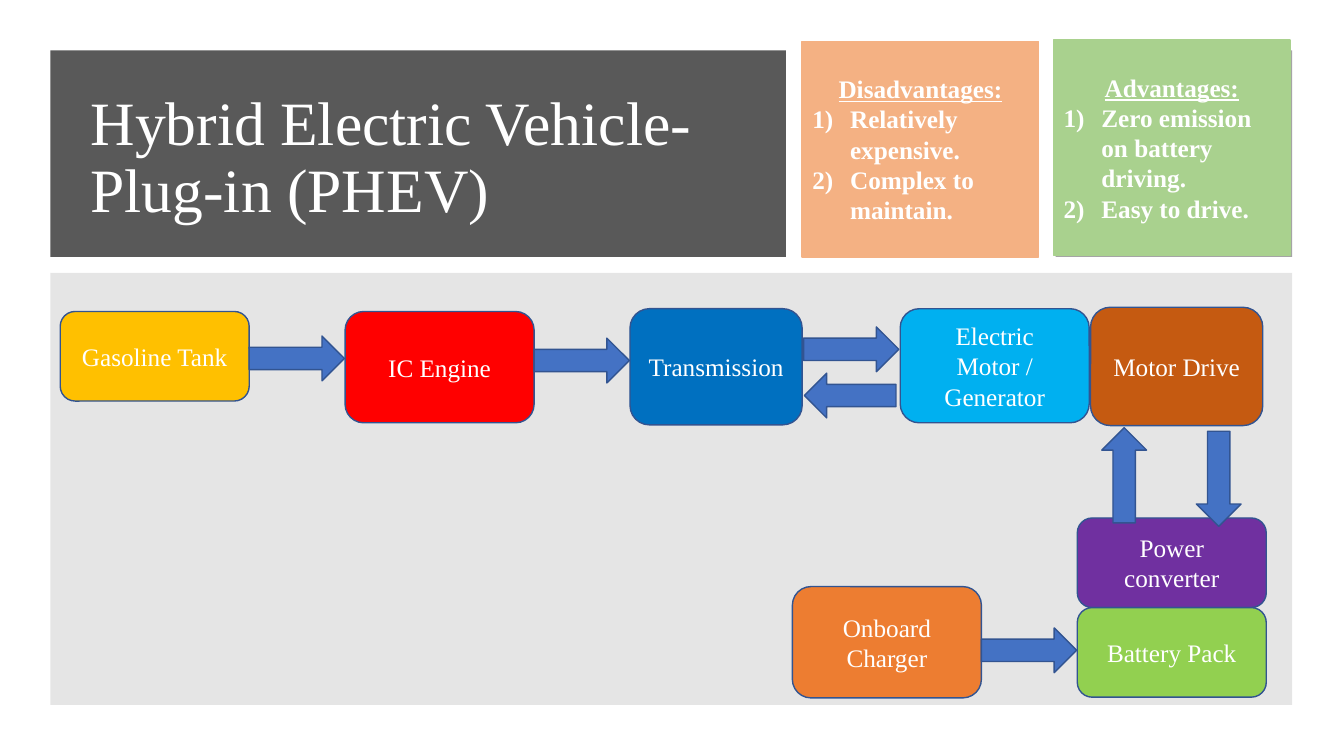
from lxml.etree import SubElement
from pptx import Presentation
from pptx.dml.color import RGBColor
from pptx.enum.shapes import MSO_SHAPE
from pptx.enum.text import MSO_ANCHOR, MSO_AUTO_SIZE, PP_ALIGN
from pptx.oxml.ns import qn
from pptx.util import Pt

WHITE = RGBColor(0xFF, 0xFF, 0xFF)
DARK = RGBColor(0x59, 0x59, 0x59)
GREY = RGBColor(0xA5, 0xA5, 0xA5)
MID_GREY = RGBColor(0x80, 0x80, 0x80)
BLUE = RGBColor(0x44, 0x72, 0xC4)
OUTLINE = RGBColor(0x32, 0x54, 0x91)
PEACH = RGBColor(0xF4, 0xB1, 0x83)
MINT = RGBColor(0xA9, 0xD1, 0x8E)
GOLD = RGBColor(0xFF, 0xC0, 0x00)
RED = RGBColor(0xFF, 0x00, 0x00)
DEEP_BLUE = RGBColor(0x00, 0x70, 0xC0)
SKY = RGBColor(0x00, 0xB0, 0xF0)
BROWN = RGBColor(0xC5, 0x5A, 0x11)
PURPLE = RGBColor(0x70, 0x30, 0xA0)
GREEN = RGBColor(0x92, 0xD0, 0x50)
ORANGE = RGBColor(0xED, 0x7D, 0x31)

FONT = {"name": "Times New Roman", "size": Pt(18), "bold": False, "underline": False}
FRAME = {"word_wrap": True, "auto_size": MSO_AUTO_SIZE.NONE,
         "vertical_anchor": MSO_ANCHOR.MIDDLE}
TIGHT = {"line_spacing": 1.0, "space_before": Pt(0), "space_after": Pt(0)}
BOX_W, LOW, TALL = 135, 64, 79.5
DRIVE_W = 123
ARROW_W, ARROW_H = 68, 32

# label, colour, left, top, width, height
COMPONENTS = [
    ("Gasoline Tank", GOLD, 43, 222.5, BOX_W, LOW),
    ("IC Engine", RED, 246.5, 222.5, BOX_W, TALL),
    ("Electric Motor / Generator", SKY, 643, 220.5, BOX_W, 81.5),
    ("Power converter", PURPLE, 769.5, 370, BOX_W, LOW),
    ("Battery Pack", GREEN, 769.5, 434, BOX_W, LOW),
    ("Motor Drive", BROWN, 779, 219.5, DRIVE_W, 84.5),
    ("Transmission", DEEP_BLUE, 450, 220.5, DRIVE_W, 83),
    ("Onboard Charger", ORANGE, 566, 419, BOX_W, TALL),
]

# left, top, width, rotation, preset
RIGHT, LEFT = MSO_SHAPE.RIGHT_ARROW, MSO_SHAPE.LEFT_ARROW
ARROWS = [
    (178, 240, ARROW_W, 0, RIGHT),
    (381.5, 241.5, ARROW_W, 0, RIGHT),
    (574, 233.5, ARROW_W, 0, RIGHT),
    (574.5, 266.5, 65.5, 0, LEFT),
    (769, 323.5, ARROW_W, 270, RIGHT),
    (836.5, 326, ARROW_W, 90, RIGHT),
    (701, 448.5, ARROW_W, 0, RIGHT),
]


def apply(target, values):
    for name, value in values.items():
        setattr(target, name, value)


def place(shape, left, top, width, height):
    apply(shape, {"left": Pt(left), "top": Pt(top),
                  "width": Pt(width), "height": Pt(height)})


def paint(shape, fill, line=None):
    shape.fill.solid()
    shape.fill.fore_color.rgb = fill
    if line is None:
        shape.line.fill.background()
    else:
        shape.line.color.rgb = line
        shape.line.width = Pt(1)


def write(para, text, align=PP_ALIGN.LEFT, **font):
    apply(para, {**TIGHT, "alignment": align})
    span = para.add_run()
    span.text = text
    apply(span.font, {**FONT, **font})
    span.font.color.rgb = WHITE


def add_block(page, preset, at, fill, line=None):
    block = page.shapes.add_shape(preset, *(Pt(length) for length in at))
    block.shadow.inherit = False
    paint(block, fill, line)
    return block


def add_component(page, label, fill, *at):
    box = add_block(page, MSO_SHAPE.ROUNDED_RECTANGLE, at, fill, OUTLINE)
    apply(box.text_frame, FRAME)
    write(box.text_frame.paragraphs[0], label, PP_ALIGN.CENTER)


def bring_to_front(page, shape):
    page.shapes.element.append(shape.element)


def set_bullet(para, indent, numbered):
    props = para._p.get_or_add_pPr()
    props.set("marL", str(Pt(indent)))
    props.set("indent", str(-Pt(indent)))
    if numbered:
        SubElement(props, qn("a:buFont"), typeface="+mj-lt")
        SubElement(props, qn("a:buAutoNum"), type="arabicParenR")
    else:
        SubElement(props, qn("a:buNone"))


def fill_title(page, text):
    title = page.shapes.title
    place(title, 57.5, 57.5, 479.5, 112.5)
    apply(title.text_frame, FRAME)
    para = title.text_frame.paragraphs[0]
    write(para, text, size=Pt(44))
    para.line_spacing = 0.9
    bring_to_front(page, title)


def fill_list(page, holder, at, colour, heading, items):
    place(holder, *at)
    paint(holder, colour, colour)
    frame = holder.text_frame
    apply(frame, FRAME)
    head = frame.paragraphs[0]
    write(head, heading, PP_ALIGN.CENTER, bold=True, underline=True)
    set_bullet(head, 0, False)
    for item in items:
        para = frame.add_paragraph()
        write(para, item, bold=True)
        set_bullet(para, 27, True)
    bring_to_front(page, holder)


def main():
    deck = Presentation()
    deck.slide_width, deck.slide_height = Pt(960), Pt(540)
    page = deck.slides.add_slide(deck.slide_layouts[3])

    # Background panels
    add_block(page, MSO_SHAPE.RECTANGLE, (36, 36, 525.5, 147.5), DARK)
    add_block(page, MSO_SHAPE.RECTANGLE, (754, 36, 169, 147.5), GREY)
    diagram = add_block(page, MSO_SHAPE.RECTANGLE, (36, 195, 887, 308.5), MID_GREY)
    colour = diagram.element.spPr.find(".//" + qn("a:srgbClr"))
    SubElement(colour, qn("a:alpha"), val="20000")

    # Title
    fill_title(page, "Hybrid Electric Vehicle- Plug-in (PHEV)")

    # Drivetrain diagram
    for component in COMPONENTS:
        add_component(page, *component)
    for left, top, width, rotation, preset in ARROWS:
        arrow = add_block(page, preset, (left, top, width, ARROW_H), BLUE, OUTLINE)
        arrow.rotation = rotation

    # Pros and cons
    fill_list(page, page.placeholders[1], (573, 29.5, 169, 154), PEACH,
              "Disadvantages:", ["Relatively expensive.", "Complex to maintain."])
    fill_list(page, page.placeholders[2], (752.5, 28.5, 169, 154), MINT,
              "Advantages:", ["Zero emission on battery driving.", "Easy to drive."])

    deck.save("out.pptx")


if __name__ == "__main__":
    main()
